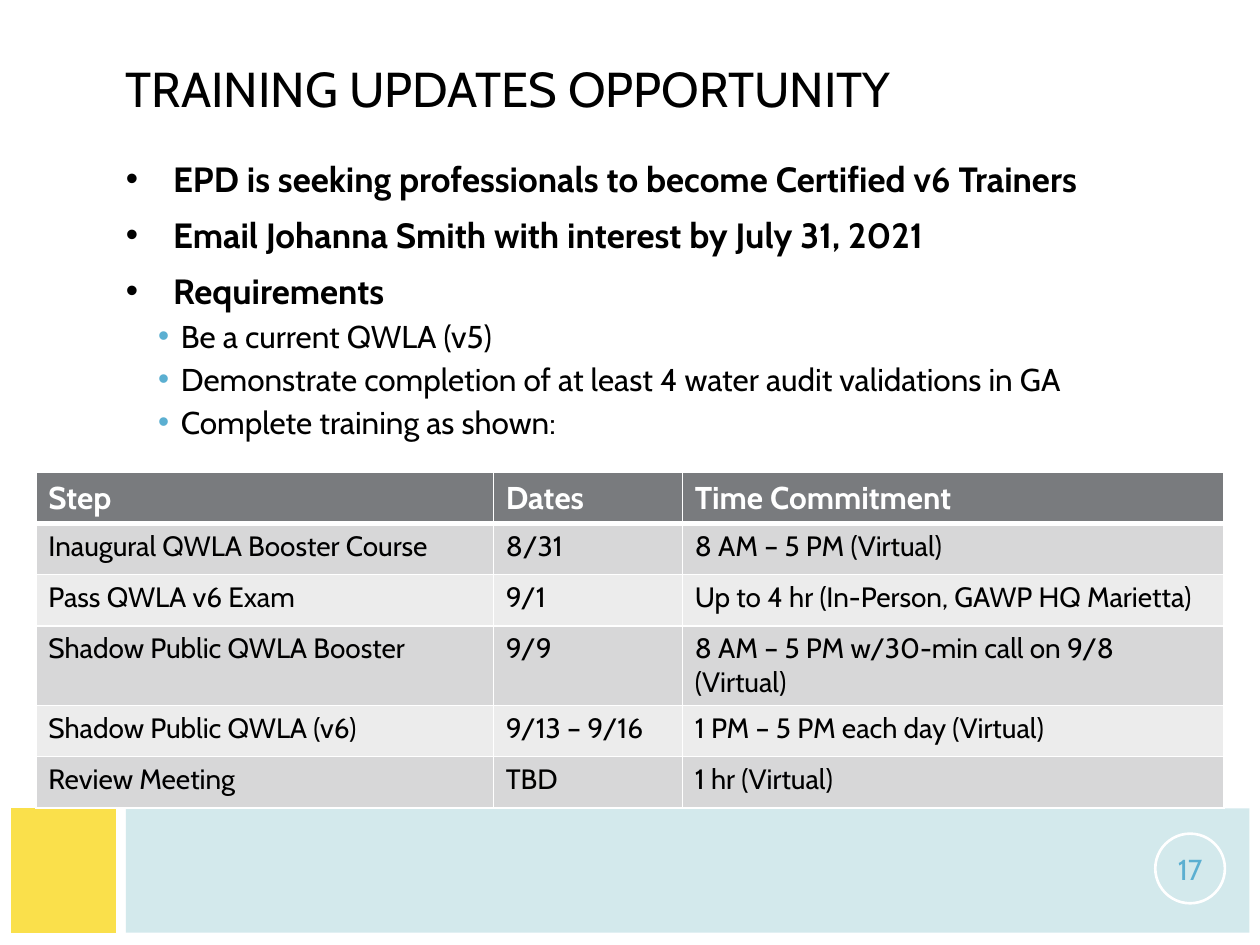
from lxml import etree
from pptx import Presentation
from pptx import util as u
from pptx.dml.color import RGBColor
from pptx.enum import shapes, text
from pptx.oxml.ns import qn

Pt = u.Pt
COLORS = {"black": "000000", "white": "FFFFFF", "yellow": "FAE04B", "pale": "C8E4E8",
          "blue": "5BAFD1", "header": "797B7E", "odd": "D7D7D8", "even": "ECECEC"}


def rgb(name):
    return RGBColor.from_string(COLORS[name])


def style(p, size, color, bold=False):
    for r in p.runs:
        r.font.name = "Cabin"
        r.font.size = Pt(size)
        r.font.bold = bold
        r.font.color.rgb = rgb(color)


prs = Presentation()
prs.slide_width, prs.slide_height = Pt(720), Pt(540)
s = prs.slides.add_slide(prs.slide_layouts[6])

# Footer blocks
footer = [
    ("yellow", [(6, 533), (6, 462.2), (66, 462.2), (65.5, 533.3)]),
    ("pale", [(72, 533), (72.4, 497.5), (72, 462.2), (714, 462.2), (714, 533)]),
]
for color, points in footer:
    fb = s.shapes.build_freeform(*points[0], scale=Pt(1))
    fb.add_line_segments(points[1:], close=True)
    sp = fb.convert_to_shape()
    sp.shadow.inherit = False
    sp.line.fill.background()
    sp.fill.solid()
    sp.fill.fore_color.rgb = rgb(color)
    if color == "pale":
        clr = sp.fill._xPr.find(qn("a:solidFill"))[0]
        etree.SubElement(clr, qn("a:alpha"), val="80000")

# Title
sp = s.shapes.add_textbox(Pt(64.8), Pt(28.8), Pt(592), Pt(43.2))
tf = sp.text_frame
tf.word_wrap = True
tf.vertical_anchor = text.MSO_ANCHOR.MIDDLE
tf.text = "TRAINING UPDATES OPPORTUNITY"
style(tf.paragraphs[0], 28, "black")

# Slide number
sp = s.shapes.add_shape(shapes.MSO_SHAPE.OVAL, Pt(660.2), Pt(476.4), Pt(39.8), Pt(39.8))
sp.shadow.inherit = False
sp.fill.background()
sp.line.color.rgb = rgb("white")
sp.line.width = Pt(1.5)
tf = sp.text_frame
tf.margin_left = tf.margin_right = tf.margin_top = tf.margin_bottom = Pt(0.7)
tf.word_wrap = False
tf.vertical_anchor = text.MSO_ANCHOR.MIDDLE
tf.text = "17"
tf.paragraphs[0].alignment = text.PP_ALIGN.CENTER
style(tf.paragraphs[0], 16.5, "blue")

# Bullets
bullets = [
    (0, "EPD is seeking professionals to become Certified v6 Trainers"),
    (0, "Email Johanna Smith with interest by July 31, 2021"),
    (0, "Requirements"),
    (1, "Be a current QWLA (v5)"),
    (1, "Demonstrate completion of at least 4 water audit validations in GA"),
    (1, "Complete training as shown:"),
]
# Per level: left margin, hanging indent, space before, size, bullet colour, bold
LEVELS = [(27, 27, 8, 20, "black", True), (31.5, 13, 3, 18, "blue", False)]
sp = s.shapes.add_textbox(Pt(64.8), Pt(86.4), Pt(592), Pt(363.6))
tf = sp.text_frame
tf.word_wrap = True
for i, (level, line) in enumerate(bullets):
    margin, hang, before, size, color, bold = LEVELS[level]
    p = tf.add_paragraph() if i else tf.paragraphs[0]
    p.text = line
    p.level = level
    pPr = p._p.get_or_add_pPr()
    pPr.set("marL", str(Pt(margin)))
    pPr.set("indent", str(-Pt(hang)))
    bu_clr = etree.SubElement(pPr, qn("a:buClr"))
    etree.SubElement(bu_clr, qn("a:srgbClr"), val=COLORS[color])
    etree.SubElement(pPr, qn("a:buFont"), typeface="Arial")
    etree.SubElement(pPr, qn("a:buChar"), char="•")
    p.space_before = Pt(before if i else 0)
    style(p, size, "black", bold)

# Training schedule
schedule = [
    ("Step", "Dates", "Time Commitment"),
    ("Inaugural QWLA Booster Course", "8/31", "8 AM – 5 PM (Virtual)"),
    ("Pass QWLA v6 Exam", "9/1", "Up to 4 hr (In-Person, GAWP HQ Marietta)"),
    ("Shadow Public QWLA Booster", "9/9", "8 AM – 5 PM w/30-min call on 9/8 (Virtual)"),
    ("Shadow Public QWLA (v6)", "9/13 – 9/16", "1 PM – 5 PM each day (Virtual)"),
    ("Review Meeting", "TBD", "1 hr (Virtual)"),
]
widths = [261.4, 108, 309.6]
row_height = 29.2
table = s.shapes.add_table(len(schedule), len(widths), Pt(20.5), Pt(270), Pt(sum(widths)),
                           Pt(row_height * len(schedule))).table
for col, width in zip(table.columns, widths):
    col.width = Pt(width)
for i, row in enumerate(schedule):
    table.rows[i].height = Pt(row_height)
    for j, value in enumerate(row):
        cell = table.cell(i, j)
        cell.text = value
        if i == 0:
            style(cell.text_frame.paragraphs[0], 18, "white", True)
        else:
            style(cell.text_frame.paragraphs[0], 16, "black")
        tcPr = cell._tc.get_or_add_tcPr()
        for side in ("L", "R", "T", "B"):
            heavy = (i, side) in ((0, "B"), (1, "T"))
            ln = etree.SubElement(tcPr, qn(f"a:ln{side}"), w=str(Pt(3 if heavy else 1)))
            fill = etree.SubElement(ln, qn("a:solidFill"))
            etree.SubElement(fill, qn("a:srgbClr"), val=COLORS["white"])
        cell.fill.solid()
        cell.fill.fore_color.rgb = rgb("header" if i == 0 else "odd" if i % 2 else "even")

prs.save("out.pptx")
